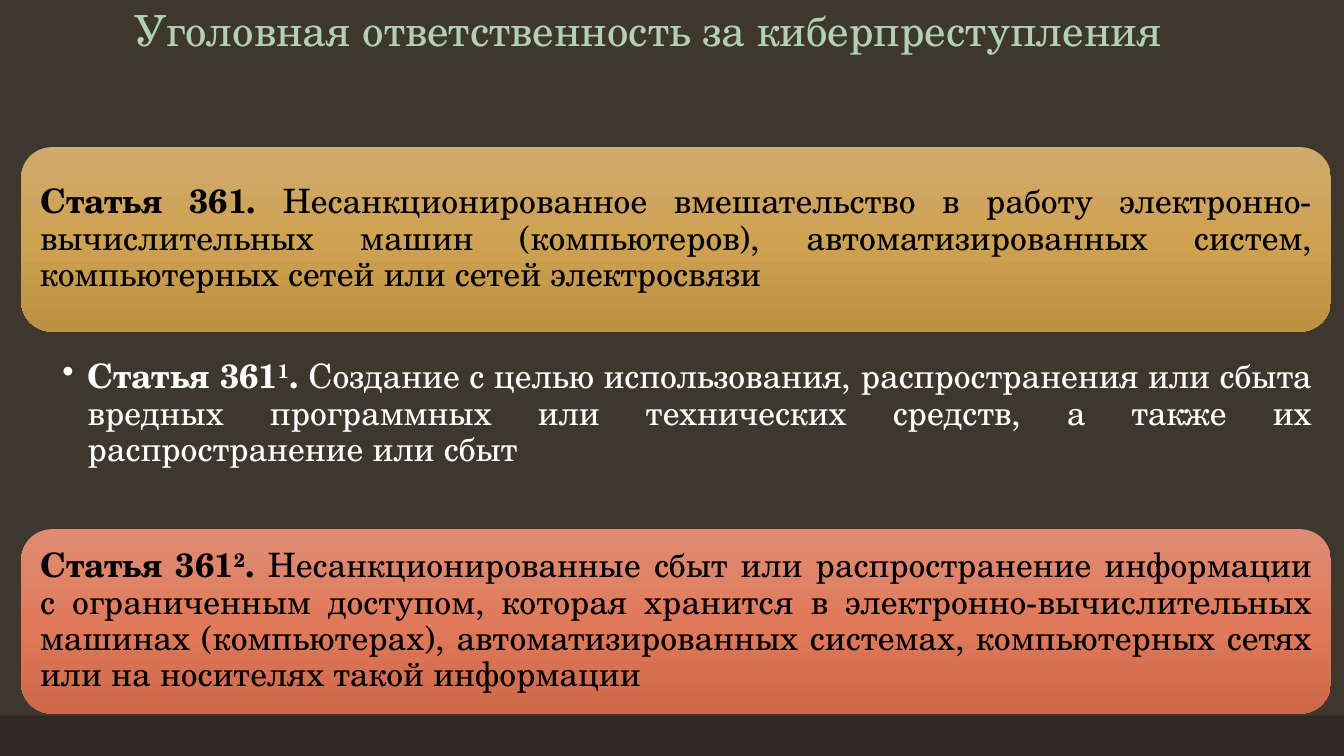
import copy
from dataclasses import dataclass

import lxml.etree
import pptx
import pptx.dml.color
import pptx.enum.shapes
import pptx.enum.text
import pptx.oxml.ns
import pptx.util

Inches = pptx.util.Inches
Pt = pptx.util.Pt
RGBColor = pptx.dml.color.RGBColor
Align = pptx.enum.text.PP_ALIGN
Anchor = pptx.enum.text.MSO_ANCHOR
Preset = pptx.enum.shapes.MSO_SHAPE
qn = pptx.oxml.ns.qn

FONT = "TeX Gyre Schola"
BACKGROUND = RGBColor(0x3D, 0x37, 0x2E)
FOOTER = RGBColor(0x2E, 0x29, 0x23)
TITLE = RGBColor(0xB2, 0xD0, 0xB4)
BLACK = RGBColor(0x00, 0x00, 0x00)
WHITE = RGBColor(0xFF, 0xFF, 0xFF)
GOLD = (RGBColor(0xD0, 0xAA, 0x6E), RGBColor(0xCF, 0xA2, 0x51), RGBColor(0xBE, 0x91, 0x42))
CORAL = (RGBColor(0xDF, 0x8C, 0x75), RGBColor(0xE0, 0x7A, 0x5A), RGBColor(0xCE, 0x68, 0x49))

LEFT, WIDTH = 0.21, 12.99


@dataclass
class Article:
    top: float
    height: float
    number: str
    index: str
    text: str
    gradient: tuple[RGBColor, ...] = ()  # no gradient: a plain bulleted item


ARTICLES = [
    Article(1.46, 1.83, "Статья 361", "",
            "Несанкционированное вмешательство в работу электронно-вычислительных машин "
            "(компьютеров), автоматизированных систем, компьютерных сетей или сетей "
            "электросвязи", GOLD),
    Article(3.54, 1.18, "Статья 361", "1",
            "Создание с целью использования, распространения или сбыта вредных программных "
            "или технических средств, а также их распространение или сбыт"),
    Article(5.25, 1.83, "Статья 361", "2",
            "Несанкционированные сбыт или распространение информации с ограниченным "
            "доступом, которая хранится в электронно-вычислительных машинах (компьютерах), "
            "автоматизированных системах, компьютерных сетях или на носителях такой "
            "информации", CORAL),
]


def add_run(paragraph, text: str, size: float, color: RGBColor,
            bold: bool = False, superscript: bool = False) -> None:
    run = paragraph.add_run()
    run.text = text
    run.font.name = FONT
    run.font.size = Pt(size)
    run.font.bold = bold
    run.font.color.rgb = color
    if superscript:
        run.font._element.set("baseline", "30000")


def set_frame(shape, insets: tuple[float, float, float, float], anchor, alignment):
    """Set up the text frame (insets: left, top, right, bottom); return its paragraph."""
    frame = shape.text_frame
    frame.word_wrap = True
    frame.vertical_anchor = anchor
    frame.margin_left, frame.margin_top, frame.margin_right, frame.margin_bottom = map(Inches, insets)
    paragraph = frame.paragraphs[0]
    paragraph.alignment = alignment
    paragraph.line_spacing = 0.9
    return paragraph


def add_panel(slide, preset, left: float, top: float, width: float, height: float):
    shape = slide.shapes.add_shape(preset, Inches(left), Inches(top), Inches(width), Inches(height))
    shape.shadow.inherit = False
    shape.line.fill.background()
    return shape


def fill_gradient(shape, colors: tuple[RGBColor, ...]) -> None:
    shape.fill.gradient()
    shape.fill.gradient_angle = 270
    stop_list = shape._element.spPr.find(qn("a:gradFill")).find(qn("a:gsLst"))
    stop_list.append(copy.deepcopy(stop_list[0]))
    for index, (stop, color) in enumerate(zip(shape.fill.gradient_stops, colors)):
        stop.position = index / (len(colors) - 1)
        stop.color.rgb = color


def add_bullet(paragraph) -> None:
    properties = paragraph._p.get_or_add_pPr()
    properties.set("marL", str(Inches(0.25)))
    properties.set("indent", str(Inches(-0.25)))
    lxml.etree.SubElement(properties, qn("a:buChar")).set("char", "•")


def add_article(slide, article: Article) -> None:
    if article.gradient:
        shape = add_panel(slide, Preset.ROUNDED_RECTANGLE, LEFT, article.top, WIDTH, article.height)
        fill_gradient(shape, article.gradient)
        paragraph = set_frame(shape, (0.1, 0.1, 0.1, 0.1), Anchor.MIDDLE, Align.JUSTIFY)
        color = BLACK
    else:
        shape = slide.shapes.add_textbox(
            Inches(LEFT), Inches(article.top), Inches(WIDTH), Inches(article.height))
        paragraph = set_frame(shape, (0.41, 0.03, 0.19, 0.03), Anchor.TOP, Align.JUSTIFY)
        add_bullet(paragraph)
        color = WHITE
    add_run(paragraph, article.number, 24, color, bold=True)
    if article.index:
        add_run(paragraph, article.index, 24, color, bold=True, superscript=True)
    add_run(paragraph, ". ", 24, color, bold=True)
    add_run(paragraph, article.text, 24, color)


def main() -> None:
    presentation = pptx.Presentation()
    presentation.slide_width = Inches(13.33)
    presentation.slide_height = Inches(7.5)
    slide = presentation.slides.add_slide(presentation.slide_layouts[6])
    slide.background.fill.solid()
    slide.background.fill.fore_color.rgb = BACKGROUND

    # Footer band
    footer = add_panel(slide, Preset.RECTANGLE, 0, 7.1, 13.33, 0.4)
    footer.fill.solid()
    footer.fill.fore_color.rgb = FOOTER

    # Articles
    for article in ARTICLES:
        add_article(slide, article)

    # Title, set slightly left of centre by its right inset
    title = slide.shapes.add_textbox(Inches(0.05), Inches(0.03), Inches(WIDTH), Inches(0.57))
    paragraph = set_frame(title, (0.1, 0.05, 0.33, 0.05), Anchor.BOTTOM, Align.CENTER)
    add_run(paragraph, "Уголовная ответственность за киберпреступления", 30.6, TITLE)

    presentation.save("out.pptx")


if __name__ == "__main__":
    main()
